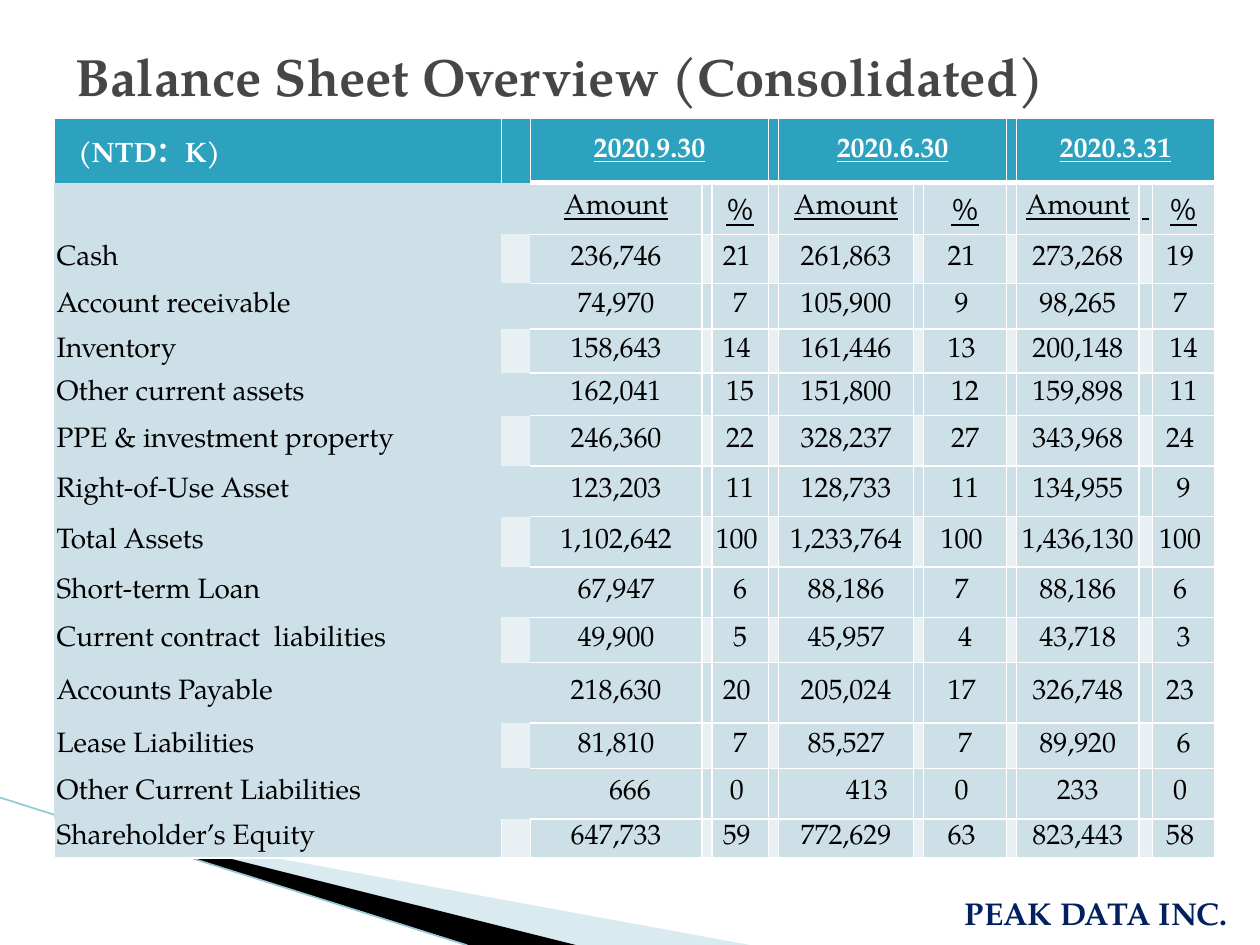
import pptx
import pptx.util
import pptx.dml.color
import pptx.enum.shapes
import pptx.enum.text
import pptx.oxml.ns
import lxml.etree

WHITE, HEADER, PALE, PALER = "FFFFFF", "2DA2BF", "CDE0E8", "E8F0F4"
GRID_COLUMNS, GRID_ROWS = 100, 75
TABLE_COLUMNS = [35.5, 2.3, 13.6, 0.8, 4.5, 0.8, 10.7, 0.8, 6.6, 0.8, 9.7, 1.1, 4.9]
TABLE_ROWS = [5.1, 4.1, 3.9, 3.6, 3.5, 3.4, 4, 4, 4, 4, 3.6, 4.8, 3.6, 4, 3.1]
VALUE_COLUMNS = [0, 2, 4, 6, 8, 10, 12]
DATES = {2: "2020.9.30", 6: "2020.6.30", 10: "2020.3.31"}
UNDERLINED_GAPS = {(0, 5), (1, 3), (1, 5), (1, 7), (1, 11)}
INDENTS = {(13, 2): 2.2, (13, 6): 3.3}
ACCOUNTS = [
    "|Amount|％|Amount|％|Amount|％",
    "Cash|236,746|21 |261,863|21 |273,268|19 ",
    "Account receivable|74,970|7|105,900|9 |98,265|7 ",
    "Inventory|158,643|14 |161,446|13 |200,148|14",
    "Other current assets|162,041|15|151,800|12|159,898|11",
    "PPE & investment property|246,360|22|328,237|27|343,968|24 ",
    "Right-of-Use Asset|123,203|11|128,733|11|134,955|9",
    "Total Assets|1,102,642|100 |1,233,764|100 |1,436,130|100 ",
    "Short-term Loan|67,947|6|88,186|7 |88,186|6 ",
    "Current contract  liabilities|49,900|5|45,957|4|43,718|3",
    "Accounts Payable|218,630|20 |205,024|17 |326,748|23 ",
    "Lease Liabilities|81,810|7|85,527|7|89,920|6",
    "Other Current Liabilities|666|0 |413|0 |233|0 ",
    "Shareholder’s Equity|647,733|59 |772,629|63 |823,443|58 ",
]


def color(code):
    """Turn a hex string into a colour."""
    return pptx.dml.color.RGBColor.from_string(code)


class Page:
    """Hold the style and the current slide, measured on a grid."""

    def __init__(self, deck):
        """Add a blank slide to the deck."""
        self.font = "TeX Gyre Pagella"
        self.column = deck.slide_width / GRID_COLUMNS
        self.row = deck.slide_height / GRID_ROWS
        self.shapes = deck.slides.add_slide(deck.slide_layouts[6]).shapes

    def across(self, columns):
        """Give the length of some grid columns."""
        return pptx.util.Emu(round(columns * self.column))

    def down(self, rows):
        """Give the length of some grid rows."""
        return pptx.util.Emu(round(rows * self.row))

    def place(self, left, top, width, height):
        """Turn grid units into a position and size."""
        return self.across(left), self.down(top), self.across(width), self.down(height)

    def letter(self, para, words, size, shade, bold=False, underline=False):
        """Put styled words into a paragraph."""
        if words:
            para.add_run().text = words
        font = para.font
        font.name, font.size, font.bold = self.font, pptx.util.Pt(size), bold
        font.underline = underline
        font.color.rgb = color(shade)

    def text(self, words, spot, size, shade, wrap=True):
        """Add a bold text box."""
        box = self.shapes.add_textbox(*self.place(*spot))
        box.text_frame.word_wrap = wrap
        self.letter(box.text_frame.paragraphs[0], words, size, shade, bold=True)

    def outline(self, points, shade, opacity=100):
        """Add a filled polygon."""
        corners = [(self.across(x), self.down(y)) for x, y in points]
        builder = self.shapes.build_freeform(*corners[0])
        builder.add_line_segments(corners[1:], close=True)
        shape = builder.convert_to_shape()
        shape.shadow.inherit = False
        shape.line.fill.background()
        shape.fill.solid()
        shape.fill.fore_color.rgb = color(shade)
        if opacity < 100:
            tone = shape._element.spPr.find(".//" + pptx.oxml.ns.qn("a:srgbClr"))
            alpha = lxml.etree.SubElement(tone, pptx.oxml.ns.qn("a:alpha"))
            alpha.set("val", str(opacity * 1000))

    def line(self, start, end, shade, weight):
        """Add a straight line."""
        connector = self.shapes.add_connector(
            pptx.enum.shapes.MSO_CONNECTOR.STRAIGHT,
            self.across(start[0]), self.down(start[1]),
            self.across(end[0]), self.down(end[1]))
        connector.line.color.rgb = color(shade)
        connector.line.width = pptx.util.Pt(weight)
        lxml.etree.SubElement(connector._element.spPr, pptx.oxml.ns.qn("a:effectLst"))

    def table(self, left, top, columns, rows):
        """Add an unstyled table and return it."""
        frame = self.shapes.add_table(
            len(rows), len(columns), *self.place(left, top, sum(columns), sum(rows)))
        table = frame.table
        style = table._tbl.tblPr.find(pptx.oxml.ns.qn("a:tableStyleId"))
        style.text = "{2D5ABB26-0587-4C30-8999-92F81FD0307C}"
        table.horz_banding = False
        for column, width in zip(table.columns, columns):
            column.width = self.across(width)
        for row, height in zip(table.rows, rows):
            row.height = self.down(height)
        return table

    def cell(self, cell, words, fill, borders, shade, align, **style):
        """Fill, border and letter one table cell."""
        properties = cell._tc.get_or_add_tcPr()
        for side in "LRTB":
            if side in borders:
                edge = lxml.etree.SubElement(properties, pptx.oxml.ns.qn("a:ln" + side))
                edge.set("w", str(pptx.util.Pt(borders[side])))
                solid = lxml.etree.SubElement(edge, pptx.oxml.ns.qn("a:solidFill"))
                lxml.etree.SubElement(solid, pptx.oxml.ns.qn("a:srgbClr")).set("val", WHITE)
        cell.fill.solid()
        cell.fill.fore_color.rgb = color(fill)
        cell.margin_left = cell.margin_right = self.across(0.2)
        cell.margin_top = cell.margin_bottom = 0
        cell.vertical_anchor = pptx.enum.text.MSO_ANCHOR.MIDDLE
        para = cell.text_frame.paragraphs[0]
        para.alignment = align
        self.letter(para, words, 16, shade, **style)
        return para


def edges(row, column):
    """Give the border weights of a table cell."""
    if row == 0:
        sides = {"L": 1, "T": 1, "R": 1}
        return sides if column < 2 else {**sides, "B": 3}
    if column < 2:
        return {"L": 1, "R": 1, "B": 1} if row == len(TABLE_ROWS) - 1 else {}
    top = 3 if row == 1 else 1
    sides = {"T": top, "R": 1, "B": 1}
    return sides if column == 2 else {"L": 1, **sides}


def balance_sheet(page):
    """Draw the balance sheet table."""
    table = page.table(4.3, 9.4, TABLE_COLUMNS, TABLE_ROWS)
    records = [{0: "(NTD：K)", **DATES}]
    records += [dict(zip(VALUE_COLUMNS, line.split("|"))) for line in ACCOUNTS]
    for row, record in enumerate(records):
        for column in range(len(TABLE_COLUMNS)):
            gap = (row, column) in UNDERLINED_GAPS
            fill = PALER if row > 1 and row % 2 == 0 and column % 2 else PALE
            align = pptx.enum.text.PP_ALIGN.CENTER if column else pptx.enum.text.PP_ALIGN.LEFT
            para = page.cell(
                table.cell(row, column), " " if gap else record.get(column, ""),
                fill if row else HEADER, edges(row, column),
                "000000" if row else WHITE, align,
                bold=row == 0, underline=row < 2 and column > 0)
            if (row, column) in INDENTS:
                para._p.get_or_add_pPr().set("marL", str(page.across(INDENTS[row, column])))
    label = table.cell(0, 0).text_frame.paragraphs[0]
    label._p.get_or_add_pPr().set("indent", str(page.across(1.7)))
    for column in DATES:
        table.cell(0, column).merge(table.cell(0, column + 2))


def main():
    """Build and save the slide."""
    deck = pptx.Presentation()
    deck.slide_width, deck.slide_height = pptx.util.Inches(10), pptx.util.Inches(7.5)
    page = Page(deck)
    page.outline([(5.5, 65.1), (59.5, 75), (45.6, 75), (5.5, 65)], "A0CBDC", 40)
    page.outline([(5.3, 64.9), (45.7, 75), (37.2, 75), (5.4, 65)], "000000")
    page.line((0, 63.3), (37, 75), "97C5D8", 0.95)
    balance_sheet(page)
    page.text("Balance Sheet Overview (Consolidated)", (5, 3, 90, 12.5), 30, "464646")
    page.text("PEAK DATA INC.", (75.6, 70.5, 23.7, 4), 18, "002060", wrap=False)
    deck.save("out.pptx")


if __name__ == "__main__":
    main()
